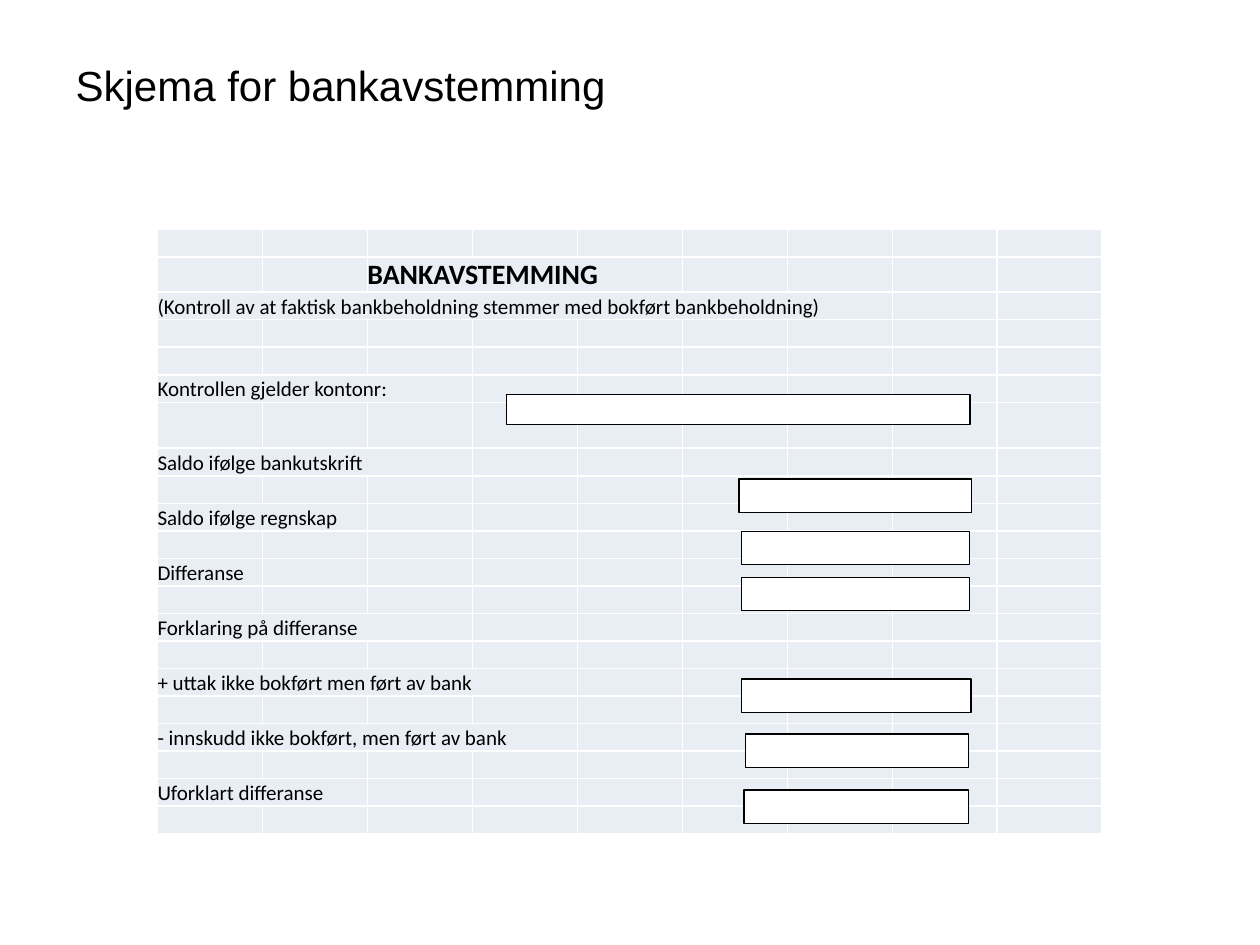
from typing import NamedTuple

from lxml import etree
from pptx import Presentation
from pptx.dml.color import RGBColor
from pptx.enum.shapes import MSO_SHAPE
from pptx.enum.text import MSO_ANCHOR, PP_ALIGN
from pptx.oxml.ns import qn
from pptx.util import Pt

RECTANGLE = MSO_SHAPE.RECTANGLE
MIDDLE, BOTTOM = MSO_ANCHOR.MIDDLE, MSO_ANCHOR.BOTTOM
LEFT = PP_ALIGN.LEFT

BLACK = RGBColor(0x00, 0x00, 0x00)
WHITE = RGBColor(0xFF, 0xFF, 0xFF)
CELL_FILL = RGBColor(0xE9, 0xED, 0xF4)

COLUMNS, ROWS = 9, 21
COLUMN_WIDTH = 60
ROW_HEIGHT = 15.75
SPECIAL_HEIGHTS = {1: 20, 6: 26.25}
BODY_SIZE = 12


class Label(NamedTuple):
    row: int
    text: str
    span: int
    column: int = 0
    size: float = BODY_SIZE
    bold: bool = False


class EntryField(NamedTuple):
    left: float
    top: float
    width: float
    height: float = 19


LABELS = [
    Label(1, "BANKAVSTEMMING", 3, column=2, size=16, bold=True),
    Label(2, "(Kontroll av at faktisk bankbeholdning stemmer med bokført bankbeholdning)", 7),
    Label(5, "Kontrollen gjelder kontonr:", 3),
    Label(7, "Saldo ifølge bankutskrift", 3),
    Label(9, "Saldo ifølge regnskap", 2),
    Label(11, "Differanse", 1),
    Label(13, "Forklaring på differanse", 3),
    Label(15, "+ uttak ikke bokført men ført av bank", 4),
    Label(17, "- innskudd ikke bokført, men ført av bank", 4),
    Label(19, "Uforklart differanse", 2),
]

ENTRY_FIELDS = [
    EntryField(289.25, 225.25, 265, 17.25),
    EntryField(422.25, 273.75, 132.75),
    EntryField(423.75, 303.75, 130.5),
    EntryField(423.75, 330, 130.5),
    EntryField(423.75, 388, 131.25),
    EntryField(426, 419.5, 127.5),
    EntryField(425.25, 451.5, 128.25),
]


def add_borders(cell) -> None:
    properties = cell._tc.get_or_add_tcPr()
    for position, side in enumerate(("lnL", "lnR", "lnT", "lnB")):
        border = etree.Element(qn(f"a:{side}"), w=str(Pt(1)))
        fill = etree.SubElement(border, qn("a:solidFill"))
        etree.SubElement(fill, qn("a:srgbClr"), val=str(WHITE))
        properties.insert(position, border)


def format_cell(cell) -> None:
    cell.margin_left = cell.margin_right = cell.margin_top = cell.margin_bottom = 0
    cell.vertical_anchor = BOTTOM
    cell.fill.solid()
    cell.fill.fore_color.rgb = CELL_FILL
    add_borders(cell)
    # The end mark's size keeps empty rows at their set height.
    etree.SubElement(cell.text_frame.paragraphs[0]._p, qn("a:endParaRPr"),
                     sz=str(BODY_SIZE * 100))


def write_label(table, label: Label) -> None:
    cell = table.cell(label.row, label.column)
    if label.span > 1:
        cell.merge(table.cell(label.row, label.column + label.span - 1))
    paragraph = cell.text_frame.paragraphs[0]
    paragraph.add_run().text = label.text
    font = paragraph.font
    font.name, font.size, font.bold = "Calibri", Pt(label.size), label.bold
    font.color.rgb = BLACK


def add_form(slide) -> None:
    heights = [SPECIAL_HEIGHTS.get(row, ROW_HEIGHT) for row in range(ROWS)]
    table = slide.shapes.add_table(ROWS, COLUMNS, Pt(90), Pt(131.25),
                                   Pt(COLUMNS * COLUMN_WIDTH), Pt(sum(heights))).table
    table.first_row = table.horz_banding = False
    for column in table.columns:
        column.width = Pt(COLUMN_WIDTH)
    for row, height in zip(table.rows, heights):
        row.height = Pt(height)
    for cell in table.iter_cells():
        format_cell(cell)
    for label in LABELS:
        write_label(table, label)


def add_entry_field(slide, field: EntryField) -> None:
    box = slide.shapes.add_shape(RECTANGLE, *(Pt(length) for length in field))
    box.shadow.inherit = False
    box.fill.solid()
    box.fill.fore_color.rgb = WHITE
    box.line.color.rgb = BLACK
    box.line.width = Pt(0.75)


def set_title(slide) -> None:
    title = slide.shapes.title
    title.left, title.top, title.width, title.height = Pt(36), Pt(13), Pt(470), Pt(70.5)
    title.text_frame.vertical_anchor = MIDDLE
    heading = title.text_frame.paragraphs[0]
    heading.text = "Skjema for bankavstemming"
    heading.alignment = LEFT
    heading.font.name, heading.font.size = "Arial", Pt(24)
    heading.font.color.rgb = BLACK


def main() -> None:
    presentation = Presentation()
    presentation.slide_width, presentation.slide_height = Pt(720), Pt(540)
    slide = presentation.slides.add_slide(presentation.slide_layouts[5])
    set_title(slide)
    add_form(slide)
    for field in ENTRY_FIELDS:
        add_entry_field(slide, field)
    presentation.save("out.pptx")


if __name__ == "__main__":
    main()
